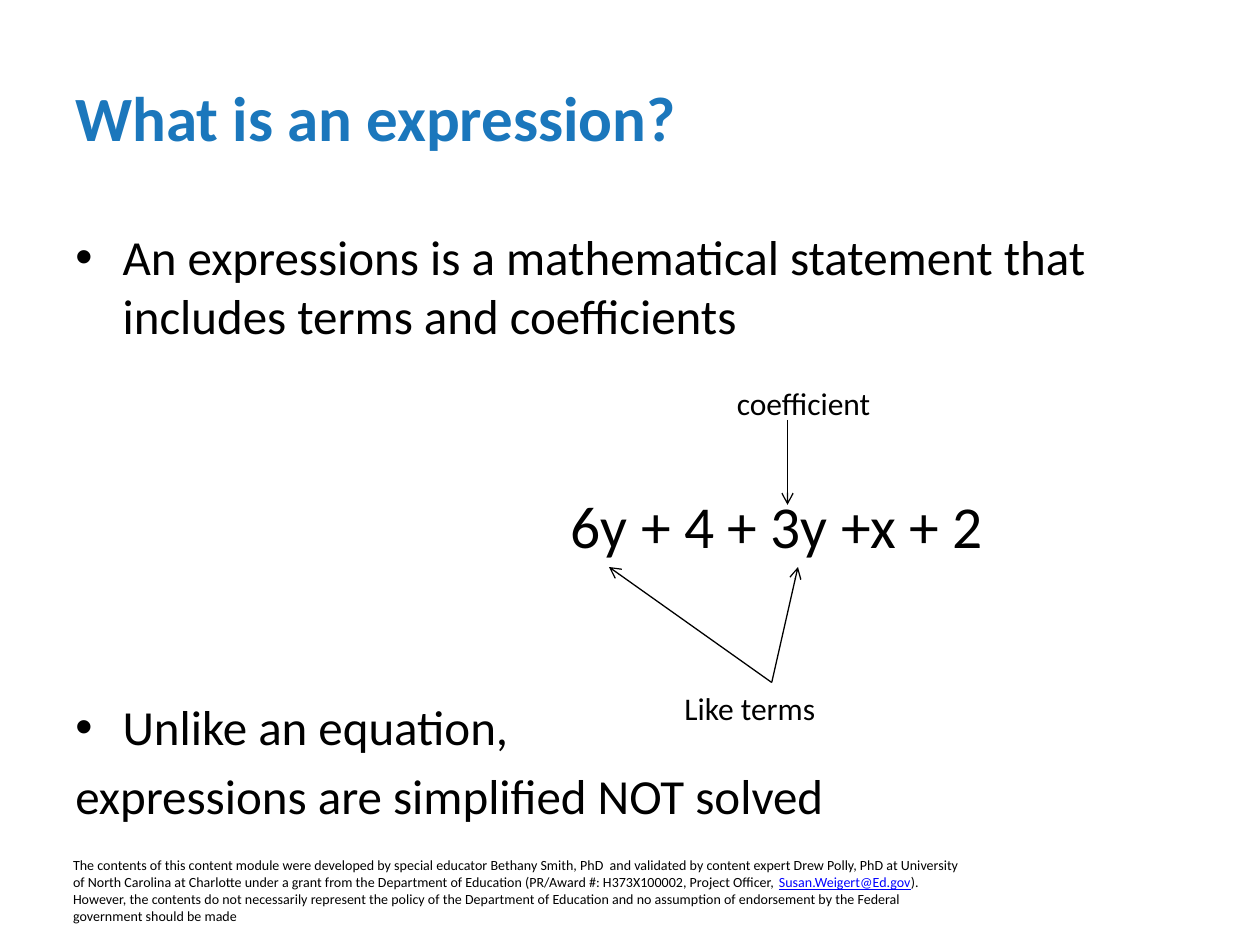
from lxml import etree
from pptx import Presentation
from pptx.dml.color import RGBColor
from pptx.enum import shapes, text
from pptx.oxml import ns
from pptx.util import Pt

COLORS = {"title": "1B77BC", "ink": "000000", "link": "0000FF"}
FACE = "Calibri"
INDENT = 27


def paint(font, size, color="ink", bold=False):
    font.name, font.size, font.bold = FACE, Pt(size), bold
    font.color.rgb = RGBColor.from_string(COLORS[color])


def add_box(slide, area, anchor=text.MSO_ANCHOR.TOP):
    box = slide.shapes.add_textbox(*map(Pt, area))
    frame = box.text_frame
    frame.word_wrap = True
    frame.vertical_anchor = anchor
    return box


def add_label(slide, area, words, size, color="ink", bold=False,
              align=text.PP_ALIGN.LEFT, anchor=text.MSO_ANCHOR.TOP):
    box = add_box(slide, area, anchor)
    para = box.text_frame.paragraphs[0]
    para.text, para.alignment = words, align
    paint(para.font, size, color, bold)
    return box


def add_body(slide, area, items):
    """Add paragraphs given as (words, space before, has bullet)."""
    frame = add_box(slide, area).text_frame
    for i, (words, gap, mark) in enumerate(items):
        para = frame.paragraphs[0] if i == 0 else frame.add_paragraph()
        para.text = words
        para.space_before = Pt(gap)
        props = para._p.get_or_add_pPr()
        props.set("marL", str(Pt(INDENT)))
        props.set("indent", str(-Pt(INDENT)))
        if mark:
            face = etree.SubElement(props, ns.qn("a:buFont"))
            face.set("typeface", "Arial")
            etree.SubElement(props, ns.qn("a:buChar")).set("char", "•")
        else:
            etree.SubElement(props, ns.qn("a:buNone"))
        paint(para.font, 28)


def add_note(slide, area, parts):
    """Add small print given as (words, colour) runs."""
    frame = add_box(slide, area, text.MSO_ANCHOR.BOTTOM).text_frame
    frame.margin_left = frame.margin_right = 0
    frame.margin_top = frame.margin_bottom = 0
    for words, color in parts:
        run = frame.paragraphs[0].add_run()
        run.text = words
        paint(run.font, 8, color)
        run.font.underline = color == "link"


def add_arrow(slide, start, end, source=None):
    """Draw an arrow, joined to the top of source if one is given."""
    line = slide.shapes.add_connector(
        shapes.MSO_CONNECTOR.STRAIGHT, *map(Pt, start + end))
    if source is not None:
        line.begin_connect(source, 0)
    line.line.width = Pt(0.75)
    line.line.color.rgb = RGBColor.from_string(COLORS["ink"])
    tip = etree.SubElement(line.line._get_or_add_ln(), ns.qn("a:tailEnd"))
    tip.set("type", "arrow")
    etree.SubElement(line._element.spPr, ns.qn("a:effectLst"))


def main():
    deck = Presentation()
    deck.slide_width, deck.slide_height = Pt(720), Pt(540)
    slide = deck.slides.add_slide(deck.slide_layouts[6])

    add_label(slide, (36, 21.6, 648, 90), "What is an expression?", 36,
              "title", True, anchor=text.MSO_ANCHOR.MIDDLE)
    add_body(slide, (36, 126, 648, 356.4), [
        ("An expressions is a mathematical statement that "
         "includes terms and coefficients", 0, True),
        ("Unlike an equation,", 201.5, True),
        ("expressions are simplified NOT solved", 5.6, False),
    ])
    add_note(slide, (41.76, 486, 510, 42), [
        ("The contents of this content module were developed by special "
         "educator Bethany Smith, PhD  and validated by content expert Drew "
         "Polly, PhD at University of North Carolina at Charlotte under a "
         "grant from the Department of Education (PR/Award #: H373X100002, "
         "Project Officer, ", "ink"),
        ("Susan.Weigert@Ed.gov", "link"),
        ("). However, the contents do not necessarily represent the policy "
         "of the Department of Education and no assumption of endorsement "
         "by the Federal government should be made", "ink"),
    ])

    add_label(slide, (186, 276, 516, 48), "6y + 4 + 3y +x + 2", 34,
              align=text.PP_ALIGN.CENTER)
    terms = add_label(slide, (384, 390, 114, 30), "Like terms", 18)
    add_label(slide, (414, 216, 114, 30), "coefficient", 18)

    add_arrow(slide, (450, 240), (450, 288.5))
    for end in ((348, 324), (456, 324)):
        add_arrow(slide, (441, 390), end, terms)

    deck.save("out.pptx")


if __name__ == "__main__":
    main()
